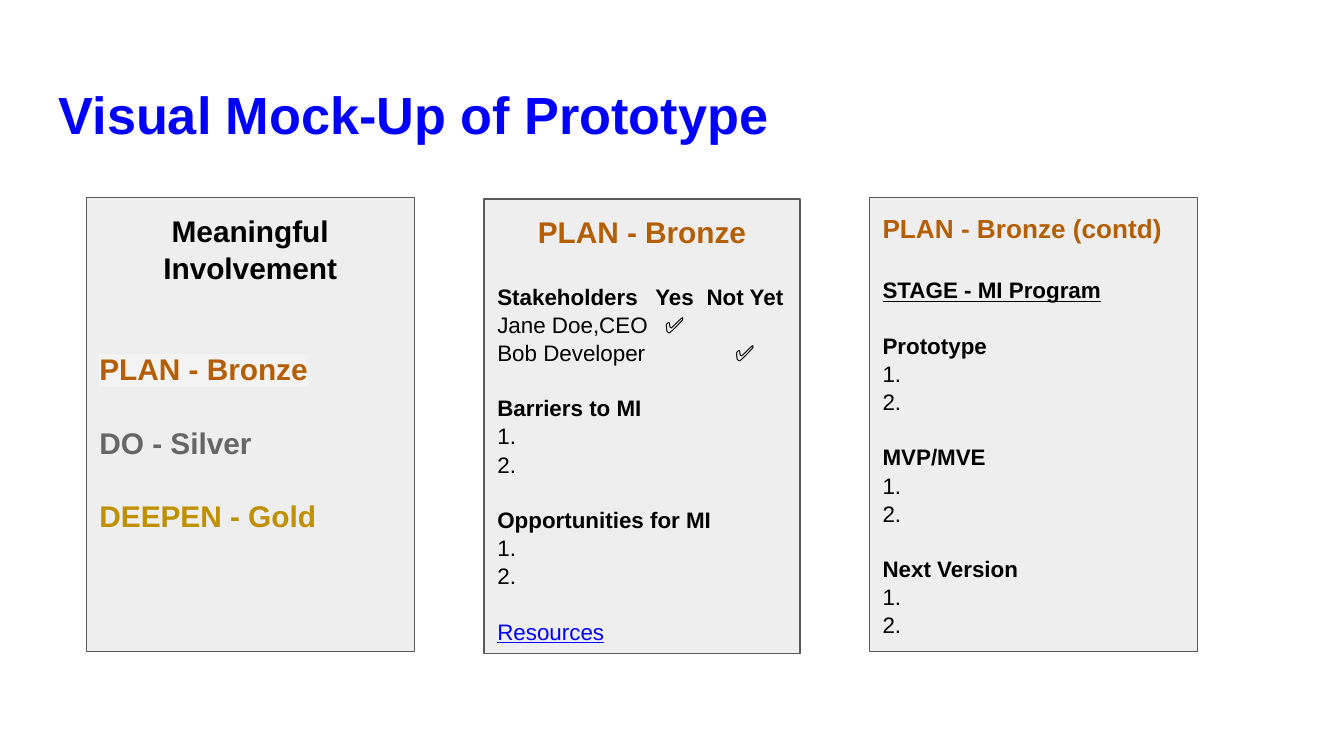
from lxml.etree import SubElement
from pptx import Presentation
from pptx.dml.color import RGBColor
from pptx.enum.shapes import MSO_SHAPE as Shape
from pptx.enum.text import MSO_ANCHOR as Anchor, PP_ALIGN as Align
from pptx.oxml.ns import qn
from pptx.util import Cm, Pt

COLORS = {
    "title": "0000FF", "link": "0000FF", "text": "000000", "card": "EEEEEE",
    "border": "595959", "bronze": "B45F06", "silver": "666666",
    "gold": "BF9000", "highlight": "F3F3F3",
}
HEADING = {"size": 16, "bold": True}
SECTION = {"size": 12, "bold": True}
ENTRY = {"size": 12, "bold": False}
CARD_TOP, CARD_HEIGHT = 3.73, 8.59


class SlideBuilder:
    font_name = "Arial"
    line_spacing = 1.05
    inset = Cm(0.25)
    tab_centers = (Cm(3.35), Cm(4.68))

    def __init__(self, presentation):
        self.slide = presentation.slides.add_slide(presentation.slide_layouts[5])

    def frame(self, shape, anchor):
        frame = shape.text_frame
        values = {"word_wrap": True, "vertical_anchor": anchor}
        for side in ("left", "top", "right", "bottom"):
            values[f"margin_{side}"] = self.inset
        for name, value in values.items():
            setattr(frame, name, value)
        return frame

    def line(self, paragraph, text, color="text", align=Align.LEFT, gap=0,
             highlight=None, tabs=False, **font_values):
        for name, value in {"alignment": align, "space_before": Pt(gap),
                            "line_spacing": self.line_spacing}.items():
            setattr(paragraph, name, value)
        if tabs:
            tab_list = SubElement(paragraph._p.get_or_add_pPr(), qn("a:tabLst"))
            for center in self.tab_centers:
                SubElement(tab_list, qn("a:tab"), pos=str(center), algn="ctr")
        run = paragraph.add_run()
        run.text = text
        font_values["size"] = Pt(font_values["size"])
        for name, value in {"name": self.font_name, **font_values}.items():
            setattr(run.font, name, value)
        run.font.color.rgb = RGBColor.from_string(COLORS[color])
        if highlight:
            properties = run._r.get_or_add_rPr()
            mark = SubElement(properties, qn("a:highlight"))
            SubElement(mark, qn("a:srgbClr"), val=COLORS[highlight])
            properties.find(qn("a:solidFill")).addnext(mark)

    def title(self, text, left, top, width, height):
        shape = self.slide.shapes.title
        for name, value in {"left": left, "top": top,
                            "width": width, "height": height}.items():
            setattr(shape, name, Cm(value))
        frame = self.frame(shape, Anchor.TOP)
        self.line(frame.paragraphs[0], text, "title", size=28, bold=True)

    def card(self, left, top, width, height, lines):
        shape = self.slide.shapes.add_shape(
            Shape.RECTANGLE, Cm(left), Cm(top), Cm(width), Cm(height))
        shape.shadow.inherit = False
        shape.fill.solid()
        shape.fill.fore_color.rgb = RGBColor.from_string(COLORS["card"])
        shape.line.color.rgb = RGBColor.from_string(COLORS["border"])
        shape.line.width = Pt(0.75)
        frame = self.frame(shape, Anchor.TOP)
        for index, (text, values) in enumerate(lines):
            paragraph = frame.add_paragraph() if index else frame.paragraphs[0]
            self.line(paragraph, text, **values)


def numbered_section(heading):
    return [(heading, {**SECTION, "gap": 14.5}), ("1.", ENTRY), ("2.", ENTRY)]


def main():
    presentation = Presentation()
    presentation.slide_width, presentation.slide_height = Cm(25.4), Cm(14.29)
    builder = SlideBuilder(presentation)
    builder.title("Visual Mock-Up of Prototype", 0.86, 1.24, 23.67, 1.6)

    builder.card(1.63, CARD_TOP, 6.2, CARD_HEIGHT, [
        ("Meaningful Involvement", {**HEADING, "align": Align.CENTER}),
        ("PLAN - Bronze", {**HEADING, "color": "bronze", "gap": 34,
                           "highlight": "highlight"}),
        ("DO - Silver", {**HEADING, "color": "silver", "gap": 19.3}),
        ("DEEPEN - Gold", {**HEADING, "color": "gold", "gap": 19.3}),
    ])
    builder.card(9.15, CARD_TOP + 0.03, 5.97, CARD_HEIGHT, [
        ("PLAN - Bronze", {**HEADING, "color": "bronze", "align": Align.CENTER}),
        ("Stakeholders\tYes\tNot Yet", {**SECTION, "gap": 17, "tabs": True}),
        ("Jane Doe,CEO\t✅", {**ENTRY, "tabs": True}),
        ("Bob Developer\t\t✅", {**ENTRY, "tabs": True}),
        *numbered_section("Barriers to MI"),
        *numbered_section("Opportunities for MI"),
        ("Resources", {**ENTRY, "color": "link", "underline": True, "gap": 14.5}),
    ])
    builder.card(16.43, CARD_TOP, 6.2, CARD_HEIGHT, [
        ("PLAN - Bronze (contd)", {"size": 14, "bold": True, "color": "bronze"}),
        ("STAGE - MI Program", {**SECTION, "underline": True, "gap": 17}),
        *numbered_section("Prototype"),
        *numbered_section("MVP/MVE"),
        *numbered_section("Next Version"),
    ])
    presentation.save("out.pptx")


if __name__ == "__main__":
    main()
